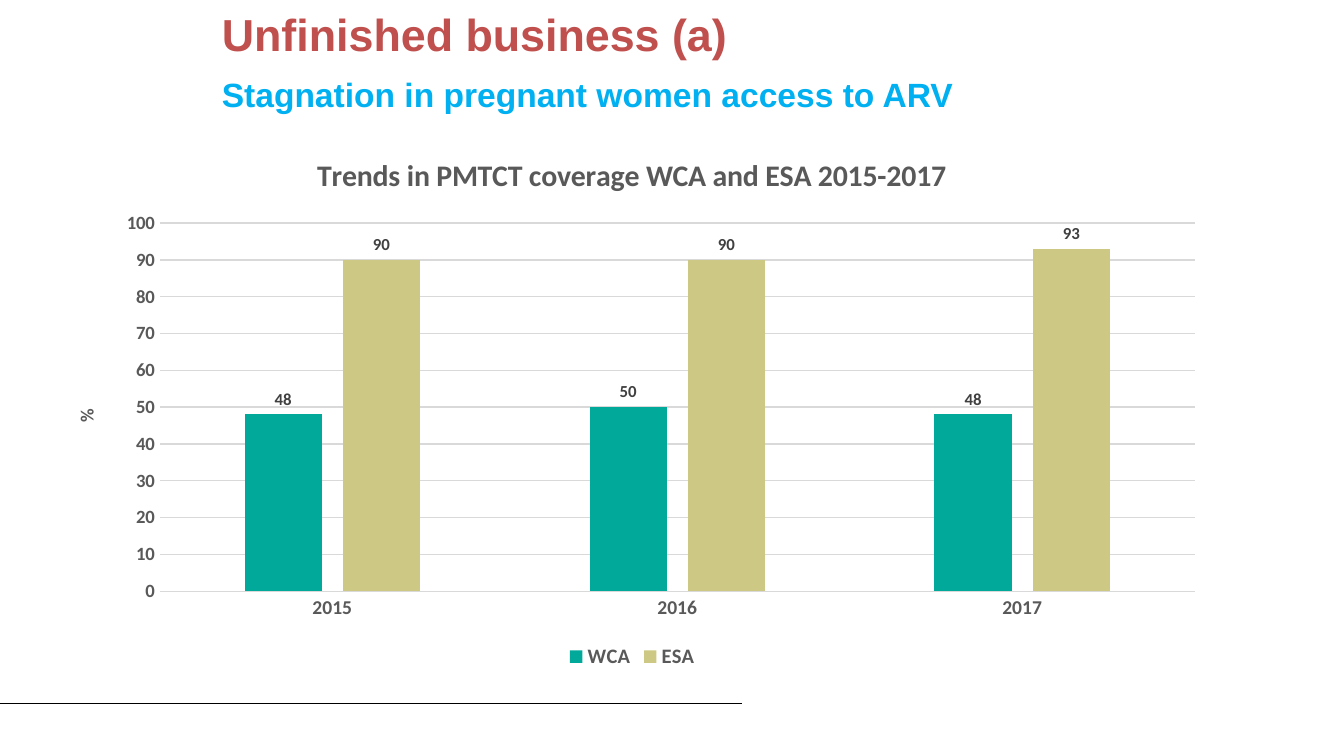
"""Build the slide on PMTCT coverage trends in WCA and ESA."""
from dataclasses import dataclass

from lxml.etree import SubElement
from pptx import Presentation
from pptx.chart.data import CategoryChartData as ChartData
from pptx.dml.color import RGBColor as Color
from pptx.enum.chart import XL_CHART_TYPE as Kind
from pptx.enum.chart import XL_LABEL_POSITION as Spot
from pptx.enum.chart import XL_LEGEND_POSITION as Side
from pptx.enum.chart import XL_TICK_MARK as Tick
from pptx.enum.shapes import MSO_CONNECTOR as Link
from pptx.enum.text import MSO_ANCHOR as Anchor
from pptx.enum.text import PP_ALIGN as Align
from pptx.oxml import parse_xml
from pptx.oxml.ns import nsdecls, qn
from pptx.util import Inches, Pt


@dataclass(frozen=True)
class Theme:
    head: str = "Arial"
    body: str = "Calibri"
    red: str = "C0504D"
    blue: str = "00B0F0"
    teal: str = "00A99A"
    sand: str = "CDC884"
    black: str = "000000"
    dark: str = "404040"
    gray: str = "595959"
    pale: str = "D9D9D9"
    title: float = 24
    sub: float = 18
    chart: float = 16
    legend: float = 11
    years: float = 10.5
    axis: float = 10
    label: float = 9


def style(font, face, size, color):
    font.name, font.size, font.bold = face, Pt(size), True
    font.color.rgb = Color.from_string(color)


def place(node, index, **spots):
    for old in node.findall(qn("c:layout")):
        node.remove(old)
    box = parse_xml(f"<c:layout {nsdecls('c')}><c:manualLayout/></c:layout>")
    for tag, val in spots.items():
        SubElement(box[0], qn(f"c:{tag}")).set("val", str(val))
    node.insert(index, box)


theme = Theme()
deck = Presentation()
deck.slide_width = Inches(10)
deck.slide_height = deck.slide_width * 9 // 16
slide = deck.slides.add_slide(deck.slide_layouts[1])

rule = slide.shapes.add_connector(
    Link.STRAIGHT, Inches(0), Inches(5.23), Inches(5.52), Inches(5.23))
rule.line.color.rgb = Color.from_string(theme.black)
rule.line.width = Pt(0.25)
SubElement(rule._element.spPr, qn("a:effectLst"))

title, sub = slide.placeholders
heads = [
    (title, "Unfinished business (a)", 0, 6.38, 0.5,
     theme.title, theme.red, Anchor.MIDDLE),
    (sub, "Stagnation in pregnant women access to ARV", 0.57, 7.05, 0.34,
     theme.sub, theme.blue, Anchor.TOP),
]
for shape, text, top, width, height, size, color, anchor in heads:
    shape.left, shape.top = Inches(1.55), Inches(top)
    shape.width, shape.height = Inches(width), Inches(height)
    frame = shape.text_frame
    frame.word_wrap, frame.vertical_anchor = True, anchor
    para = frame.paragraphs[0]
    para.alignment, para.space_before = Align.LEFT, Pt(0)
    run = para.add_run()
    run.text = text
    style(run.font, theme.head, size, color)

para = sub.text_frame.paragraphs[0]
para.line_spacing, para.space_after = Pt(16.5), Pt(4.5)
props = para._p.get_or_add_pPr()
props.set("marL", "0")
props.set("indent", "0")
SubElement(props, qn("a:buNone"))

data = ChartData(number_format="0")
data.categories = ["2015", "2016", "2017"]
data.add_series("WCA", [48, 50, 48])
data.add_series("ESA", [90, 90, 93])
wide, high = 8.71, 4.03
chart = slide.shapes.add_chart(
    Kind.COLUMN_CLUSTERED, Inches(0.35), Inches(0.99),
    Inches(wide), Inches(high), data).chart
chart.font.name, chart.font.size = theme.body, Pt(theme.axis)

years, rates = chart.category_axis, chart.value_axis
titles = [
    (chart, "Trends in PMTCT coverage WCA and ESA 2015-2017",
     theme.chart, 1.97, 0.12),
    (rates, "%", theme.axis, 0.18, 2.03),
]
for owner, text, size, x, y in titles:
    name = owner.chart_title if owner is chart else owner.axis_title
    run = name.text_frame.paragraphs[0].add_run()
    run.text = text
    style(run.font, theme.body, size, theme.gray)
    place(name._element, 1, xMode="edge", yMode="edge",
          x=x / wide, y=y / high)
turn = rates.axis_title.text_frame._txBody.bodyPr
turn.set("rot", "-5400000")
turn.set("vert", "horz")
place(chart._chartSpace.chart.plotArea, 0, layoutTarget="inner",
      xMode="edge", yMode="edge", x=0.84 / wide, y=0.67 / high,
      w=7.7 / wide, h=2.74 / high)

for axis, size in [(years, theme.years), (rates, theme.axis)]:
    axis.major_tick_mark = axis.minor_tick_mark = Tick.NONE
    style(axis.tick_labels.font, theme.body, size, theme.gray)
rates.minimum_scale, rates.maximum_scale, rates.major_unit = 0, 100, 10
rates.tick_labels.number_format = "0"
rates.tick_labels.number_format_is_linked = False
rates.format.line.fill.background()
for line in [years.format.line, rates.major_gridlines.format.line]:
    line.color.rgb = Color.from_string(theme.pale)
    line.width = Pt(0.75)

plot = chart.plots[0]
plot.gap_width, plot.overlap, plot.vary_by_categories = 219, -27, False
for series, color in zip(plot.series, [theme.teal, theme.sand]):
    series.format.fill.solid()
    series.format.fill.fore_color.rgb = Color.from_string(color)
    labels = series.data_labels
    labels.show_value, labels.position = True, Spot.OUTSIDE_END
    style(labels.font, theme.body, theme.label, theme.dark)

chart.has_legend = True
chart.legend.position = Side.BOTTOM
chart.legend.include_in_layout = False
style(chart.legend.font, theme.body, theme.legend, theme.gray)

deck.save("out.pptx")
